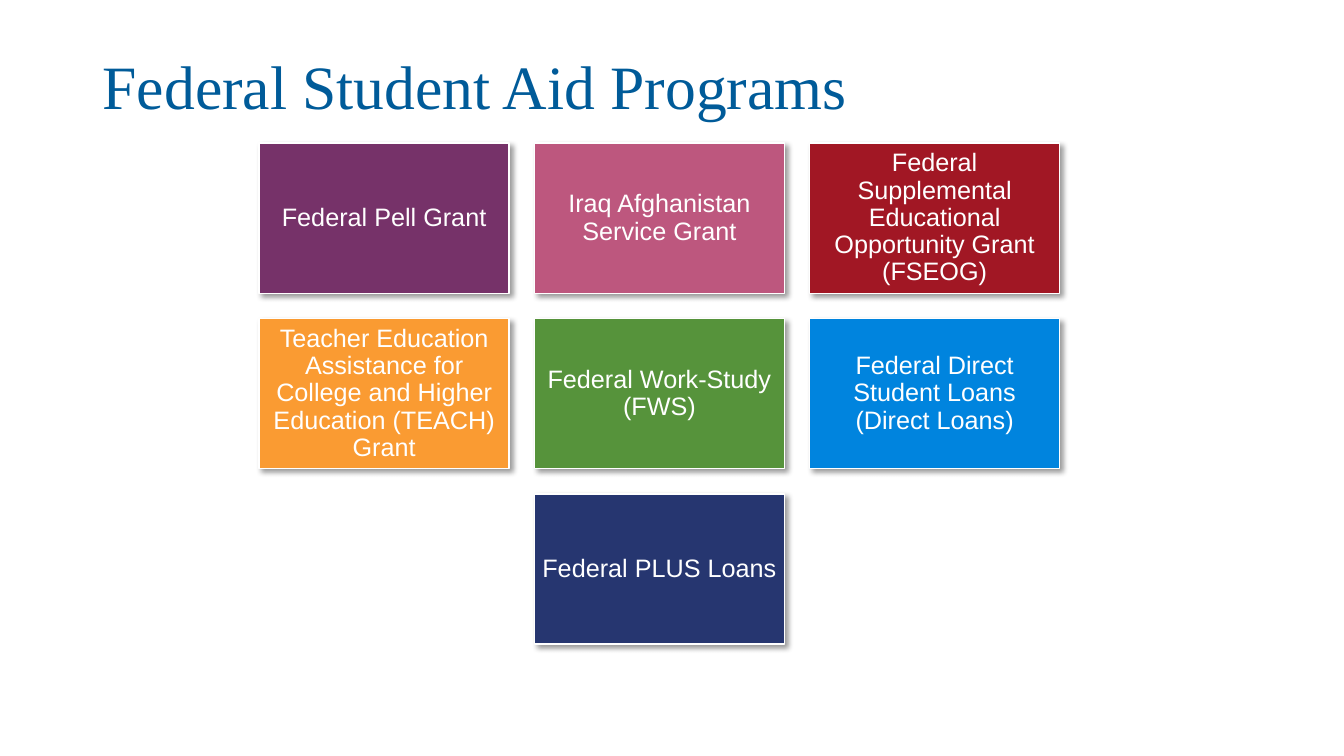
from dataclasses import dataclass

from lxml import etree
from pptx import Presentation
from pptx.dml.color import RGBColor
from pptx.enum.shapes import MSO_SHAPE
from pptx.enum.text import MSO_ANCHOR, PP_ALIGN
from pptx.oxml.ns import qn
from pptx.shapes.autoshape import Shape
from pptx.slide import Slide
from pptx.text.text import TextFrame
from pptx.util import Inches, Pt

RECTANGLE = MSO_SHAPE.RECTANGLE
MIDDLE = MSO_ANCHOR.MIDDLE
LEFT, CENTER = PP_ALIGN.LEFT, PP_ALIGN.CENTER


@dataclass(frozen=True)
class Theme:
    """Colours, fonts and type sizes of the slide."""

    heading_color: str = "005B99"
    card_text_color: str = "FFFFFF"
    border_color: str = "FFFFFF"
    shadow_color: str = "000000"
    heading_font: str = "Times New Roman"
    card_font: str = "Arial"
    heading_size: int = 44
    card_size: int = 18
    line_spacing: float = 0.9


@dataclass(frozen=True)
class Program:
    """An aid program and the colour of its card."""

    name: str
    color: str


@dataclass(frozen=True)
class Grid:
    """Placement of the program cards, in inches."""

    left: float = 2.57
    top: float = 1.42
    width: float = 2.48
    height: float = 1.49
    gap: float = 0.25
    columns: int = 3
    inset: float = 0.07


THEME = Theme()
GRID = Grid()
HEADING = "Federal Student Aid Programs"
PROGRAMS = [
    Program("Federal Pell Grant", "763269"),
    Program("Iraq Afghanistan Service Grant", "BD577E"),
    Program("Federal Supplemental Educational Opportunity Grant (FSEOG)", "A11724"),
    Program(
        "Teacher Education Assistance for College and Higher Education (TEACH) Grant",
        "FA9B32",
    ),
    Program("Federal Work-Study (FWS)", "56933B"),
    Program("Federal Direct Student Loans (Direct Loans)", "0084DE"),
    Program("Federal PLUS Loans", "263670"),
]


def write_text(
    frame: TextFrame, text: str, font: str, size: int, color: str, align: PP_ALIGN
) -> None:
    """Fill a frame with one formatted, vertically centred paragraph."""
    frame.text = text
    frame.word_wrap = True
    frame.vertical_anchor = MIDDLE
    paragraph = frame.paragraphs[0]
    paragraph.alignment = align
    paragraph.line_spacing = THEME.line_spacing
    for run in paragraph.runs:
        run.font.name = font
        run.font.size = Pt(size)
        run.font.color.rgb = RGBColor.from_string(color)


def add_shadow(card: Shape) -> None:
    """Give a card a soft shadow to the lower right."""
    card.shadow.inherit = False
    effects = card.element.spPr.find(qn("a:effectLst"))
    shadow = etree.SubElement(
        effects,
        qn("a:outerShdw"),
        blurRad=str(Pt(4)),
        dist=str(Pt(3)),
        dir=str(45 * 60000),
        algn="tl",
        rotWithShape="0",
    )
    tint = etree.SubElement(shadow, qn("a:srgbClr"), val=THEME.shadow_color)
    etree.SubElement(tint, qn("a:alpha"), val="40000")


def draw_heading(slide: Slide) -> None:
    """Draw the slide heading."""
    heading = slide.shapes.add_textbox(
        Inches(0.92), Inches(0.16), Inches(11.5), Inches(1.45)
    )
    write_text(
        heading.text_frame,
        HEADING,
        THEME.heading_font,
        THEME.heading_size,
        THEME.heading_color,
        LEFT,
    )


def draw_program(slide: Slide, program: Program, left: float, top: float) -> None:
    """Draw one program card."""
    card = slide.shapes.add_shape(
        RECTANGLE, Inches(left), Inches(top), Inches(GRID.width), Inches(GRID.height)
    )
    card.fill.solid()
    card.fill.fore_color.rgb = RGBColor.from_string(program.color)
    card.line.color.rgb = RGBColor.from_string(THEME.border_color)
    card.line.width = Pt(1)
    add_shadow(card)
    frame = card.text_frame
    frame.margin_left = frame.margin_right = Inches(GRID.inset)
    frame.margin_top = frame.margin_bottom = Inches(GRID.inset)
    write_text(
        frame,
        program.name,
        THEME.card_font,
        THEME.card_size,
        THEME.card_text_color,
        CENTER,
    )


def draw_programs(slide: Slide) -> None:
    """Draw the cards row by row, centring a short last row."""
    pitch = GRID.width + GRID.gap
    for row, start in enumerate(range(0, len(PROGRAMS), GRID.columns)):
        row_programs = PROGRAMS[start : start + GRID.columns]
        indent = (GRID.columns - len(row_programs)) * pitch / 2
        top = GRID.top + row * (GRID.height + GRID.gap)
        for column, program in enumerate(row_programs):
            draw_program(slide, program, GRID.left + indent + column * pitch, top)


def main() -> None:
    """Build and save the presentation."""
    presentation = Presentation()
    presentation.slide_width = Inches(13.33)
    presentation.slide_height = Inches(7.5)
    slide = presentation.slides.add_slide(presentation.slide_layouts[6])
    draw_heading(slide)
    draw_programs(slide)
    presentation.save("out.pptx")


if __name__ == "__main__":
    main()
